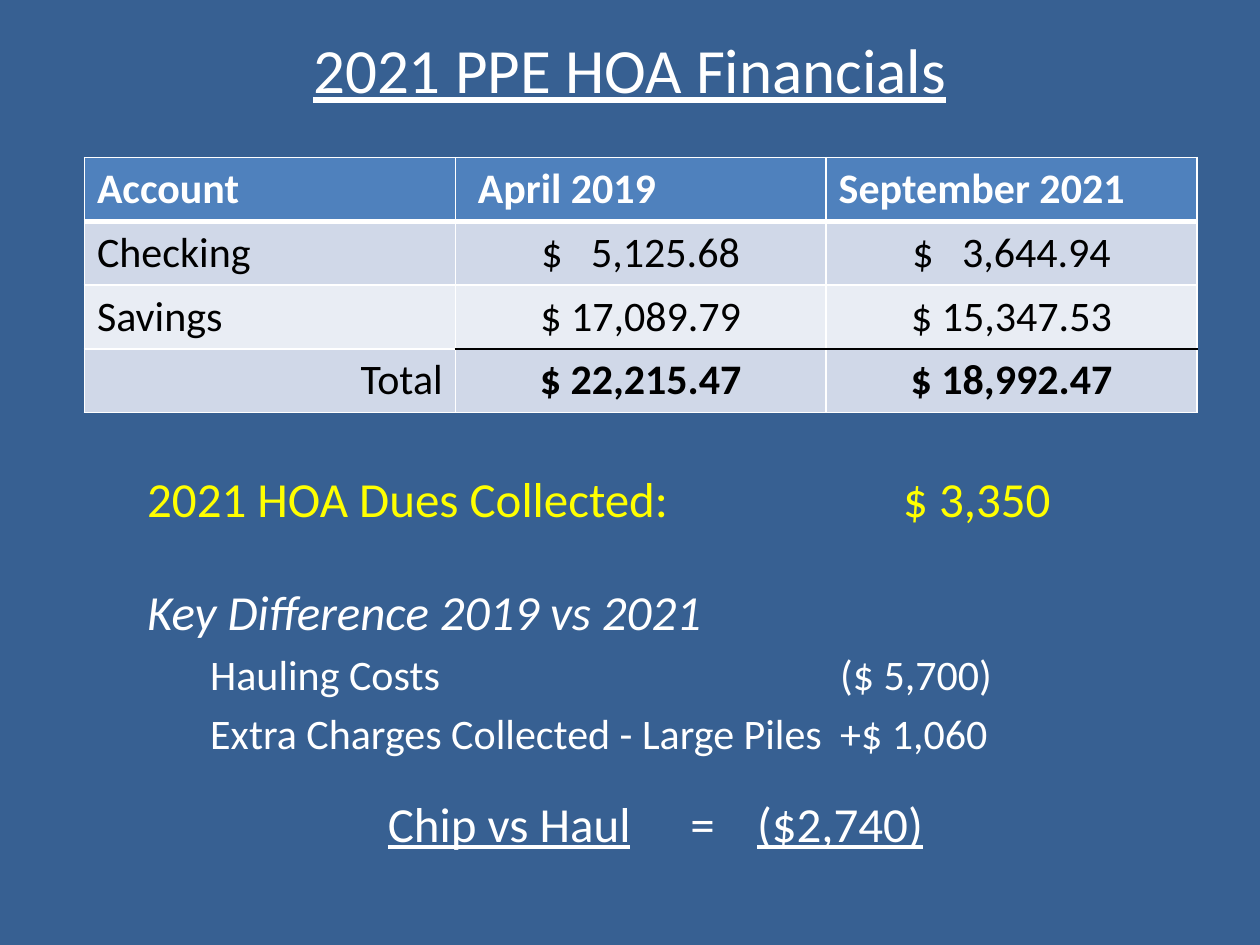
from lxml import etree
from pptx import Presentation
from pptx.dml.color import RGBColor
from pptx.enum.text import MSO_ANCHOR, PP_ALIGN
from pptx.oxml.ns import qn
from pptx.util import Inches, Pt

LEFT, CENTER, RIGHT = PP_ALIGN.LEFT, PP_ALIGN.CENTER, PP_ALIGN.RIGHT
TOP, MIDDLE = MSO_ANCHOR.TOP, MSO_ANCHOR.MIDDLE
WHITE, BLACK, YELLOW = "FFFFFF", "000000", "FFFF00"
BACKDROP, HEADER, BAND, LIGHT_BAND = "376092", "4F81BD", "D0D8E8", "E9EDF4"

ACCOUNTS = [
    ("Account", "April 2019", "September 2021"),
    ("Checking", "$   5,125.68", "$   3,644.94"),
    ("Savings", "$ 17,089.79", "$ 15,347.53"),
    ("Total", "$ 22,215.47", "$ 18,992.47"),
]
ITEM = {"size": 24, "before": 4.8, "stops": (0.5, 5.5)}
SUMMARY = [
    ([("2021 HOA Dues Collected:\t$ 3,350", {"color": YELLOW})], {"stops": (6,)}),
    ([("Key Difference 2019 vs 2021", {"italic": True})], {"before": 31}),
    ([("\tHauling Costs\t($ 5,700)", {})], ITEM),
    ([("\tExtra Charges Collected - Large Piles\t+$ 1,060", {})], ITEM),
    ([("\t", {}), ("Chip vs Haul", {"underline": True}), ("\t=\t", {}),
      ("($2,740)", {"underline": True})], {"before": 20, "stops": (1.91, 4.31, 4.84)}),
]


def rgb(value):
    return RGBColor.from_string(value)


class Deck:
    """Holds the text style and the current slide; positions are percent of the slide."""

    font = "Calibri"

    def __init__(self, width, height, backdrop):
        self.show = Presentation()
        self.show.slide_width, self.show.slide_height = Inches(width), Inches(height)
        self.slide = self.show.slides.add_slide(self.show.slide_layouts[6])
        self.slide.background.fill.solid()
        self.slide.background.fill.fore_color.rgb = rgb(backdrop)

    def area(self, left, top, width, height):
        across, down = self.show.slide_width / 100, self.show.slide_height / 100
        return [int(left * across), int(top * down), int(width * across), int(height * down)]

    def run(self, paragraph, words, size, color=WHITE, **looks):
        run = paragraph.add_run()
        run.text = words
        for name, value in {"name": self.font, "size": Pt(size), **looks}.items():
            setattr(run.font, name, value)
        run.font.color.rgb = rgb(color)

    def stops(self, paragraph, positions):
        tabs = etree.SubElement(paragraph._p.get_or_add_pPr(), qn("a:tabLst"))
        for position in positions:
            etree.SubElement(tabs, qn("a:tab"), pos=str(Inches(position)), algn="l")

    def text(self, area, lines, size, align=LEFT, anchor=TOP):
        frame = self.slide.shapes.add_textbox(*self.area(*area)).text_frame
        frame.word_wrap, frame.vertical_anchor = True, anchor
        for index, (parts, layout) in enumerate(lines):
            paragraph = frame.add_paragraph() if index else frame.paragraphs[0]
            paragraph.alignment = align
            paragraph.space_before = Pt(layout.get("before", 0))
            if "stops" in layout:
                self.stops(paragraph, layout["stops"])
            for words, looks in parts:
                self.run(paragraph, words, layout.get("size", size), **looks)

    def borders(self, cell, edges):
        properties = cell._tc.get_or_add_tcPr()
        for side in "LRTB":
            color, width = edges.get(side, (WHITE, 1))
            line = etree.SubElement(properties, qn(f"a:ln{side}"), w=str(Pt(width)))
            etree.SubElement(etree.SubElement(line, qn("a:solidFill")), qn("a:srgbClr"), val=color)

    def table(self, area, rows, cell_format):
        grid = self.slide.shapes.add_table(len(rows), len(rows[0]), *self.area(*area)).table
        grid.horz_banding = False
        for r, row in enumerate(rows):
            for c, words in enumerate(row):
                cell, (fill, align, edges, margin, looks) = grid.cell(r, c), cell_format(r, c)
                cell.margin_left = Inches(margin)
                self.borders(cell, edges)
                cell.fill.solid()
                cell.fill.fore_color.rgb = rgb(fill)
                paragraph = cell.text_frame.paragraphs[0]
                paragraph.alignment = align
                self.run(paragraph, words, 24, **looks)


def account_format(row, column):
    last = len(ACCOUNTS) - 1
    if row == 0:
        margin = 0.18 if column == 1 else 0.1
        return HEADER, LEFT, {"B": (WHITE, 3)}, margin, {"bold": True}
    edges = {"T": (WHITE, 3)} if row == 1 else {}
    if column and row >= last - 1:
        edges["T" if row == last else "B"] = (BLACK, 1)
    label_align = RIGHT if row == last else LEFT
    looks = {"color": BLACK, "bold": row == last and column > 0}
    return BAND if row % 2 else LIGHT_BAND, CENTER if column else label_align, edges, 0.1, looks


def main():
    deck = Deck(10, 7.5, BACKDROP)
    title = [([("2021 PPE HOA Financials", {"underline": True})], {})]
    deck.text((5, -1.07, 90, 16.67), title, 36, CENTER, MIDDLE)
    deck.text((10.7, 48.93, 84.2, 53.33), SUMMARY, 28)
    deck.table((6.7, 16.67, 88.3, 27), ACCOUNTS, account_format)
    deck.show.save("out.pptx")


if __name__ == "__main__":
    main()
